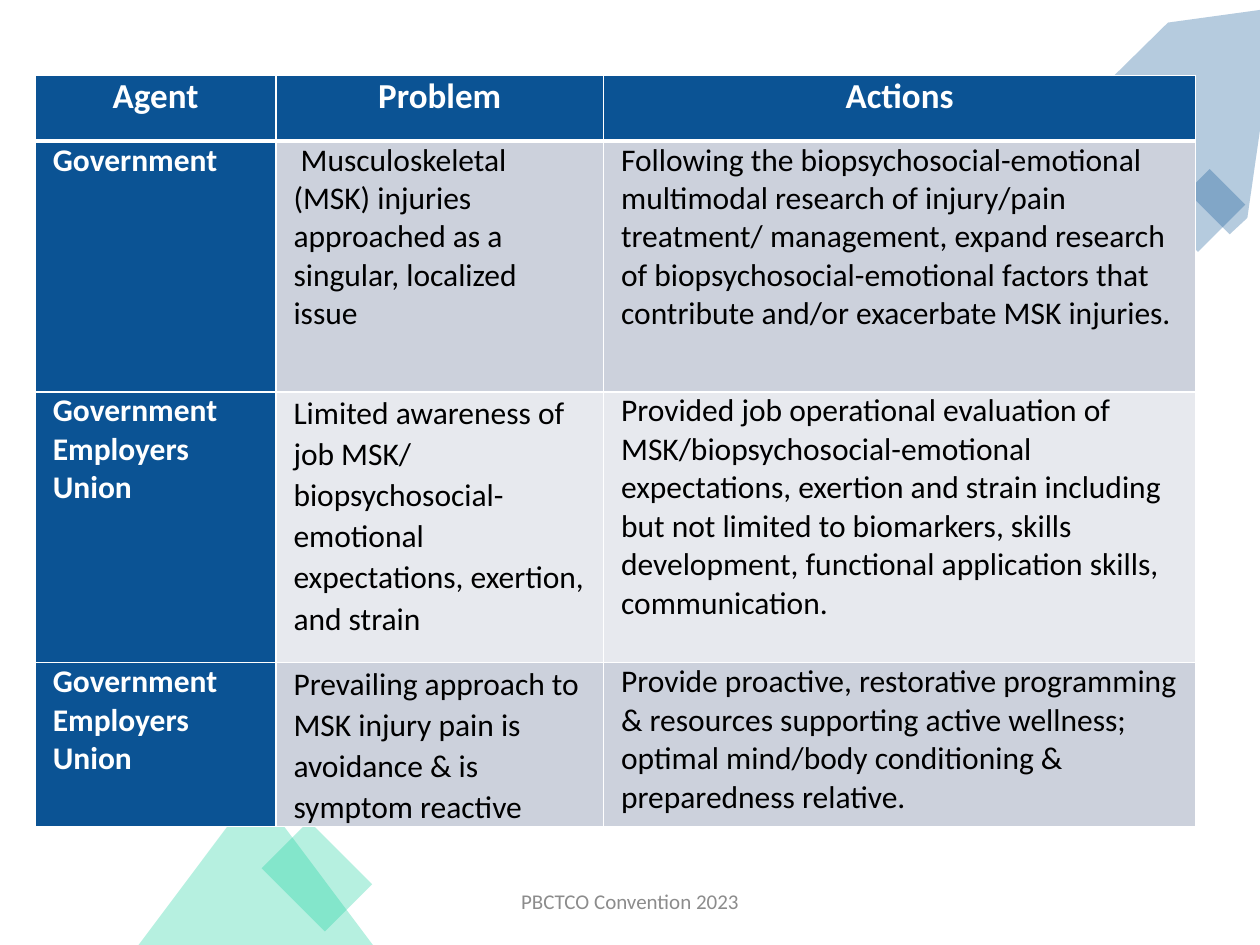
import lxml.etree
import pptx
import pptx.dml.color
import pptx.enum.shapes
import pptx.enum.text
import pptx.oxml.ns
import pptx.util

ALIGN = pptx.enum.text.PP_ALIGN
SHAPE = pptx.enum.shapes.MSO_SHAPE
qn = pptx.oxml.ns.qn

COLORS = {
    "white": "FFFFFF",
    "black": "000000",
    "blue": "0B5394",
    "green": "10CF9B",
    "footer": "8C8C8C",
    "dark band": "CCD1DC",
    "light band": "E7E9EE",
}
GRID_COLUMNS, GRID_ROWS = 100, 75
SLIDE_WIDTH, SLIDE_HEIGHT = pptx.util.Inches(10), pptx.util.Inches(7.5)

COLUMN_WIDTHS = [19.1, 26, 47]
ROW_HEIGHTS = [5.2, 19.9, 21.5, 13]
AGENTS = ["Government", "Employers", "Union"]
TABLE_ROWS = [
    [["Agent"], ["Problem"], ["Actions"]],
    [
        AGENTS[:1],
        ["\N{NO-BREAK SPACE}Musculoskeletal (MSK) injuries approached as a singular, localized issue"],
        ["Following the biopsychosocial-emotional multimodal research of injury/pain "
         "treatment/ management, expand research of biopsychosocial-emotional factors "
         "that contribute and/or exacerbate MSK injuries."],
    ],
    [
        AGENTS,
        ["Limited awareness of job MSK/ biopsychosocial-emotional expectations, "
         "exertion, and strain"],
        ["Provided job operational evaluation of MSK/biopsychosocial-emotional "
         "expectations, exertion and strain including but not limited to biomarkers, "
         "skills development, functional application skills, communication."],
    ],
    [
        AGENTS,
        ["Prevailing approach to MSK injury pain is avoidance & is symptom reactive"],
        ["Provide proactive, restorative programming & resources supporting active "
         "wellness; optimal mind/body conditioning & preparedness relative."],
    ],
]
HEADER_FONT = {"name": "Calibri", "size": pptx.util.Pt(20), "bold": True}
AGENT_FONT = {**HEADER_FONT, "size": pptx.util.Pt(18)}
BODY_FONT = {**AGENT_FONT, "bold": False}
FOOTER_FONT = {**BODY_FONT, "size": pptx.util.Pt(12)}
LOOSE_SPACING = {"line_spacing": 1.07, "space_after": pptx.util.Pt(8)}


def columns(count):
    return round(SLIDE_WIDTH * count / GRID_COLUMNS)


def rows(count):
    return round(SLIDE_HEIGHT * count / GRID_ROWS)


def rgb(color):
    return pptx.dml.color.RGBColor.from_string(COLORS[color])


def set_attributes(target, values):
    for name, value in values.items():
        setattr(target, name, value)


def paint(shape, color, opacity=100):
    """Give a shape a plain fill, with no line and no shadow."""
    shape.shadow.inherit = False
    shape.line.fill.background()
    shape.fill.solid()
    shape.fill.fore_color.rgb = rgb(color)
    if opacity < 100:
        color_element = shape.fill._xPr.find(".//" + qn("a:srgbClr"))
        alpha = lxml.etree.SubElement(color_element, qn("a:alpha"))
        alpha.set("val", str(opacity * 1000))


def add_preset(slide, kind, left, top, width, height, color, rotation=0):
    shape = slide.shapes.add_shape(
        kind, columns(left), rows(top), columns(width), rows(height))
    shape.rotation = rotation
    paint(shape, color, opacity=30)


def add_polygon(slide, points, color):
    corners = [(columns(x), rows(y)) for x, y in points]
    builder = slide.shapes.build_freeform(*corners[0])
    builder.add_line_segments(corners[1:], close=True)
    paint(builder.convert_to_shape(), color, opacity=30)


def write(text_frame, lines, font, color, paragraph_format):
    for index, line in enumerate(lines):
        paragraph = text_frame.paragraphs[0] if index == 0 else text_frame.add_paragraph()
        set_attributes(paragraph, paragraph_format)
        run = paragraph.add_run()
        run.text = line
        set_attributes(run.font, font)
        run.font.color.rgb = rgb(color)


def add_footer(slide, text):
    box = slide.shapes.add_textbox(columns(33.1), rows(69.5), columns(33.8), rows(4))
    frame = box.text_frame
    set_attributes(frame, {
        "word_wrap": True, "vertical_anchor": pptx.enum.text.MSO_ANCHOR.MIDDLE})
    write(frame, [text], FOOTER_FONT, "footer", {"alignment": ALIGN.CENTER})


def set_borders(cell, widths):
    """Draw white borders; widths maps L, R, T and B, in that order, to points."""
    properties = cell._tc.get_or_add_tcPr()
    for index, (side, width) in enumerate(widths.items()):
        line = lxml.etree.Element(qn("a:ln" + side), w=str(pptx.util.Pt(width)))
        fill = lxml.etree.SubElement(line, qn("a:solidFill"))
        lxml.etree.SubElement(fill, qn("a:srgbClr"), val=COLORS["white"])
        properties.insert(index, line)


def cell_style(row, column):
    """Return the fill, font, text colour and paragraph format of a cell."""
    if row == 0:
        return "blue", HEADER_FONT, "white", {"alignment": ALIGN.CENTER}
    if column == 0:
        return "blue", AGENT_FONT, "white", {}
    band = "dark band" if row % 2 else "light band"
    return band, BODY_FONT, "black", LOOSE_SPACING if column == 1 and row > 1 else {}


def add_agent_table(slide):
    frame = slide.shapes.add_table(
        len(TABLE_ROWS), len(COLUMN_WIDTHS), columns(2.8), rows(6),
        columns(sum(COLUMN_WIDTHS)), rows(sum(ROW_HEIGHTS)))
    table = frame.table
    for column, width in zip(table.columns, COLUMN_WIDTHS):
        column.width = columns(width)
    for row, height in zip(table.rows, ROW_HEIGHTS):
        row.height = rows(height)
    for row, contents in enumerate(TABLE_ROWS):
        for column, lines in enumerate(contents):
            cell = table.cell(row, column)
            fill, font, color, paragraph_format = cell_style(row, column)
            set_attributes(cell, {
                "margin_left": columns(1.4), "margin_right": columns(1.4),
                "margin_top": 0, "margin_bottom": 0})
            cell.fill.solid()
            cell.fill.fore_color.rgb = rgb(fill)
            set_borders(cell, {
                "L": 1, "R": 1, "T": 3 if row == 1 else 1, "B": 3 if row == 0 else 1})
            write(cell.text_frame, lines, font, color, paragraph_format)


def main():
    presentation = pptx.Presentation()
    set_attributes(presentation, {
        "slide_width": SLIDE_WIDTH, "slide_height": SLIDE_HEIGHT})
    slide = presentation.slides.add_slide(presentation.slide_layouts[6])
    slide.background.fill.solid()
    slide.background.fill.fore_color.rgb = rgb("white")

    add_polygon(slide, [(101.4, 0.6), (92.7, 1.8), (86.7, 7.7), (97.6, 18.6), (99, 17.3)],
                "blue")
    add_preset(slide, SHAPE.RECTANGLE, 92.9, 14.7, 5.3, 4, "blue", rotation=315)
    add_preset(slide, SHAPE.RECTANGLE, 21.6, 66.9, 7.1, 5.3, "green", rotation=45)
    add_preset(slide, SHAPE.ISOSCELES_TRIANGLE, 11, 62.6, 18.6, 12.4, "green")
    add_footer(slide, "PBCTCO Convention 2023")
    add_agent_table(slide)
    presentation.save("out.pptx")


if __name__ == "__main__":
    main()
